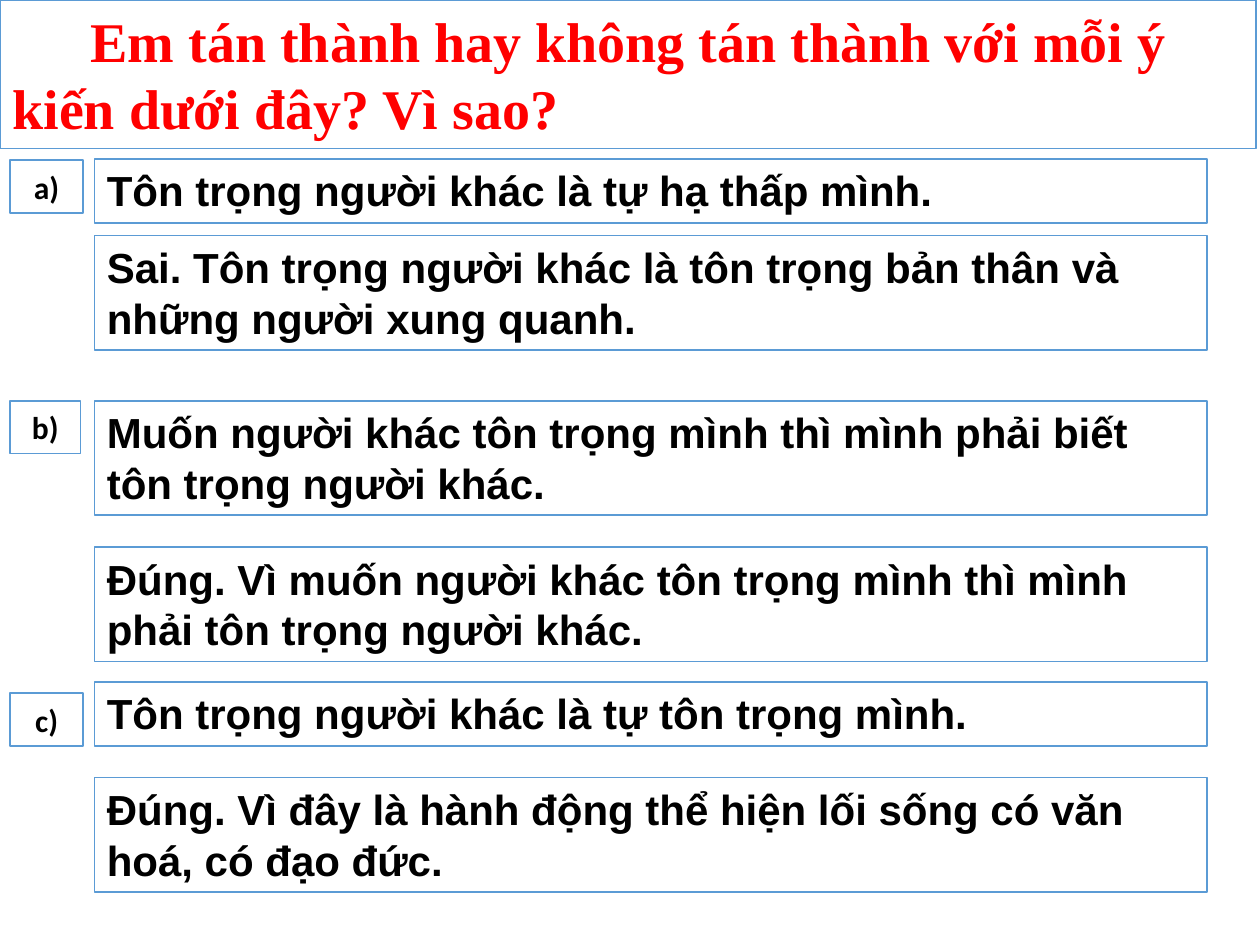
import pptx
import pptx.util
import pptx.dml.color
import pptx.enum.shapes
import pptx.enum.text
from dataclasses import dataclass

Inches, Pt = pptx.util.Inches, pptx.util.Pt
RGB = pptx.dml.color.RGBColor.from_string
ALIGN = pptx.enum.text.PP_ALIGN
ANCHOR = pptx.enum.text.MSO_ANCHOR


@dataclass(frozen=True)
class TextStyle:
    font: str
    size: int
    color: str
    align: ALIGN = ALIGN.LEFT
    anchor: ANCHOR = ANCHOR.TOP
    indent: float = 0


class Theme:
    paper = "FFFFFF"
    border = "5B9BD5"
    border_width = 1
    question = TextStyle("Times New Roman", 32, "FF0000", indent=0.62)
    label = TextStyle("Calibri", 18, "000000", ALIGN.CENTER, ANCHOR.MIDDLE)
    body = TextStyle("Arial", 24, "000000")


# Content
QUESTION = "Em tán thành hay không tán thành với mỗi ý kiến dưới đây? Vì sao?"

# label, (label top, label width), then (top, line count, text) of opinion and answer
ITEMS = [
    ("a)", (1.27, 0.58),
     (1.26, 1, "Tôn trọng người khác là tự hạ thấp mình."),
     (1.87, 2, "Sai. Tôn trọng người khác là tôn trọng bản thân và những người xung quanh.")),
    ("b)", (3.18, 0.56),
     (3.18, 2, "Muốn người khác tôn trọng mình thì mình phải biết tôn trọng người khác."),
     (4.34, 2, "Đúng. Vì muốn người khác tôn trọng mình thì mình phải tôn trọng người khác.")),
    ("c)", (5.5, 0.58),
     (5.41, 1, "Tôn trọng người khác là tự tôn trọng mình."),
     (6.17, 2, "Đúng. Vì đây là hành động thể hiện lối sống có văn hoá, có đạo đức.")),
]

# Layout
LABEL_LEFT, LABEL_HEIGHT = 0.08, 0.42
BODY_LEFT, BODY_WIDTH = 0.75, 8.83
LINE_HEIGHT, BODY_PADDING = 0.4, 0.11


def add_box(slide, text, style, left, top, width, height):
    box = slide.shapes.add_shape(
        pptx.enum.shapes.MSO_SHAPE.RECTANGLE,
        Inches(left), Inches(top), Inches(width), Inches(height))
    box.shadow.inherit = False
    box.fill.solid()
    box.fill.fore_color.rgb = RGB(Theme.paper)
    box.line.color.rgb = RGB(Theme.border)
    box.line.width = Pt(Theme.border_width)

    frame = box.text_frame
    frame.word_wrap = True
    frame.vertical_anchor = style.anchor
    paragraph = frame.paragraphs[0]
    paragraph.alignment = style.align
    if style.indent:
        paragraph._p.get_or_add_pPr().set("indent", str(Inches(style.indent)))
    run = paragraph.add_run()
    run.text = text
    run.font.name = style.font
    run.font.size = Pt(style.size)
    run.font.bold = True
    run.font.color.rgb = RGB(style.color)


def main():
    deck = pptx.Presentation()
    deck.slide_width, deck.slide_height = Inches(10), Inches(7.5)
    slide = deck.slides.add_slide(deck.slide_layouts[6])

    # Question banner
    add_box(slide, QUESTION, Theme.question, 0, 0, 9.97, 1.18)

    # Opinions, each with its label and answer
    for label, (label_top, label_width), *statements in ITEMS:
        add_box(slide, label, Theme.label,
                LABEL_LEFT, label_top, label_width, LABEL_HEIGHT)
        for top, lines, text in statements:
            add_box(slide, text, Theme.body, BODY_LEFT, top, BODY_WIDTH,
                    lines * LINE_HEIGHT + BODY_PADDING)

    deck.save("out.pptx")


if __name__ == "__main__":
    main()
